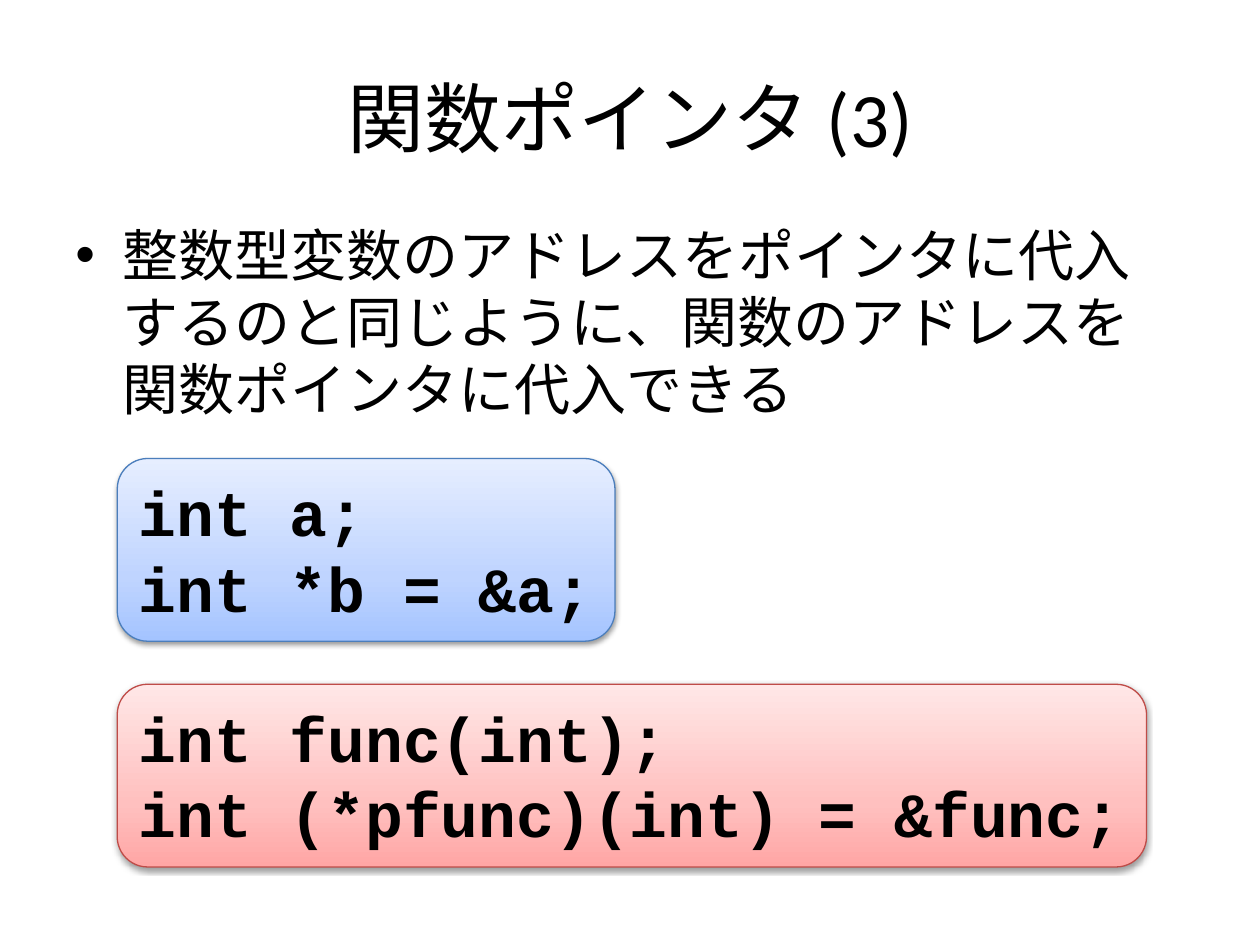
from dataclasses import dataclass

from lxml import etree
from pptx import Presentation
from pptx.dml.color import RGBColor
from pptx.enum.shapes import MSO_SHAPE
from pptx.enum.text import MSO_ANCHOR, MSO_AUTO_SIZE, PP_ALIGN
from pptx.oxml.ns import qn
from pptx.util import Pt

ROUNDED = MSO_SHAPE.ROUNDED_RECTANGLE
TOP, MIDDLE = MSO_ANCHOR.TOP, MSO_ANCHOR.MIDDLE
LEFT, CENTER = PP_ALIGN.LEFT, PP_ALIGN.CENTER
GROW = MSO_AUTO_SIZE.SHAPE_TO_FIT_TEXT


@dataclass(frozen=True)
class Theme:
    body_font: str = "Calibri"
    code_font: str = "Courier New"
    title_size: int = 44
    body_size: int = 32
    code_size: int = 36
    text: str = "000000"
    # Gradient colours run from the bottom edge to the top edge
    blue: tuple = ("A4C4FF", "BFD4FF", "E6EEFF")
    blue_line: str = "4B7EBC"
    red: tuple = ("FFA6A5", "FFC0BF", "FFE7E7")
    red_line: str = "BF4C48"
    stops: tuple = (0, 35, 100)


THEME = Theme()


def style(para, font, size, bold=False, align=LEFT):
    para.alignment = align
    para.font.name = font
    para.font.size = Pt(size)
    para.font.bold = bold
    para.font.color.rgb = RGBColor.from_string(THEME.text)


def add_color(parent, value):
    return etree.SubElement(parent, qn("a:srgbClr"), val=value)


def add_text(page, text, left, top, width, height, size, anchor=TOP, align=LEFT):
    box = page.shapes.add_textbox(Pt(left), Pt(top), Pt(width), Pt(height))
    frame = box.text_frame
    frame.word_wrap = True
    frame.vertical_anchor = anchor
    para = frame.paragraphs[0]
    para.text = text
    style(para, THEME.body_font, size, align=align)
    return para


def add_bullet(para, indent):
    props = para._p.get_or_add_pPr()
    props.set("marL", str(Pt(indent)))
    props.set("indent", str(-Pt(indent)))
    # The bullet font and sign come before the default run properties
    font = etree.Element(qn("a:buFont"), typeface="Arial")
    sign = etree.Element(qn("a:buChar"), char="•")
    defaults = props.find(qn("a:defRPr"))
    defaults.addprevious(font)
    defaults.addprevious(sign)


def fill_gradient(shape, colors):
    shape.fill.gradient()
    shape.fill.gradient_angle = 90
    stops = shape._element.spPr.find(qn("a:gradFill")).find(qn("a:gsLst"))
    stops.clear()
    for position, color in zip(THEME.stops, colors):
        stop = etree.SubElement(stops, qn("a:gs"), pos=str(position * 1000))
        add_color(stop, color)


def add_shadow(shape):
    shape.shadow.inherit = False
    effects = shape._element.spPr.find(qn("a:effectLst"))
    shadow = etree.SubElement(
        effects, qn("a:outerShdw"), blurRad=str(Pt(3.1)), dist=str(Pt(1.6)),
        dir="5400000", rotWithShape="0")
    etree.SubElement(add_color(shadow, THEME.text), qn("a:alpha"), val="38000")


def add_code(page, lines, top, width, colors, line_color):
    box = page.shapes.add_shape(ROUNDED, Pt(67), Pt(top), Pt(width), Pt(104.4))
    fill_gradient(box, colors)
    box.line.color.rgb = RGBColor.from_string(line_color)
    box.line.width = Pt(0.75)
    add_shadow(box)
    frame = box.text_frame
    frame.text = "\n".join(lines)
    frame.word_wrap = False
    frame.auto_size = GROW
    frame.vertical_anchor = TOP
    for para in frame.paragraphs:
        style(para, THEME.code_font, THEME.code_size, bold=True)


def main():
    deck = Presentation()
    deck.slide_width, deck.slide_height = Pt(720), Pt(540)
    page = deck.slides.add_slide(deck.slide_layouts[6])

    # Title
    add_text(page, "関数ポインタ (3)", 36, 21.6, 648, 90,
             THEME.title_size, MIDDLE, CENTER)

    # Code samples
    add_code(page, ["int a;", "int *b = &a;"],
             262, 284.4, THEME.blue, THEME.blue_line)
    add_code(page, ["int func(int);", "int (*pfunc)(int) = &func;"],
             391, 588.2, THEME.red, THEME.red_line)

    # Explanation
    para = add_text(
        page,
        "整数型変数のアドレスをポインタに代入するのと同じように、"
        "関数のアドレスを関数ポインタに代入できる",
        36, 122.4, 648, 124.6, THEME.body_size)
    para.space_before = Pt(0.2 * THEME.body_size)
    add_bullet(para, 27)

    deck.save("out.pptx")


if __name__ == "__main__":
    main()
